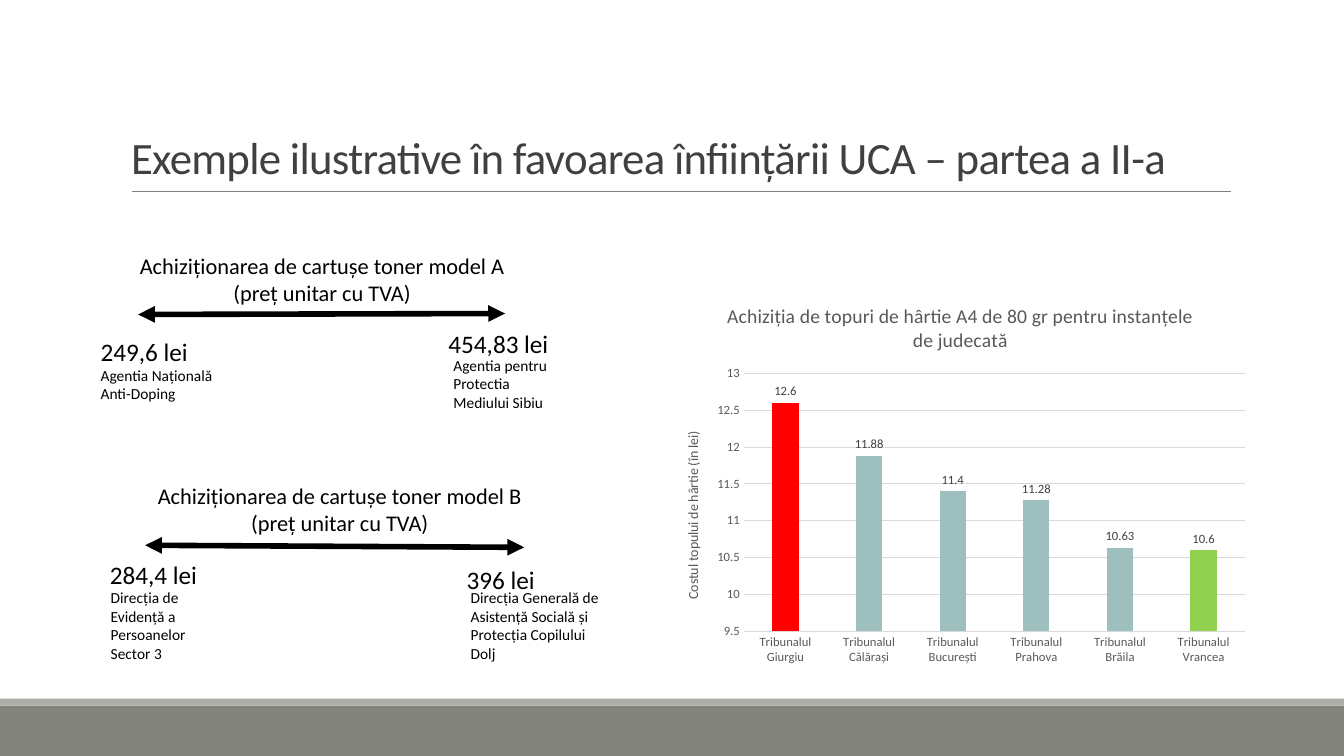
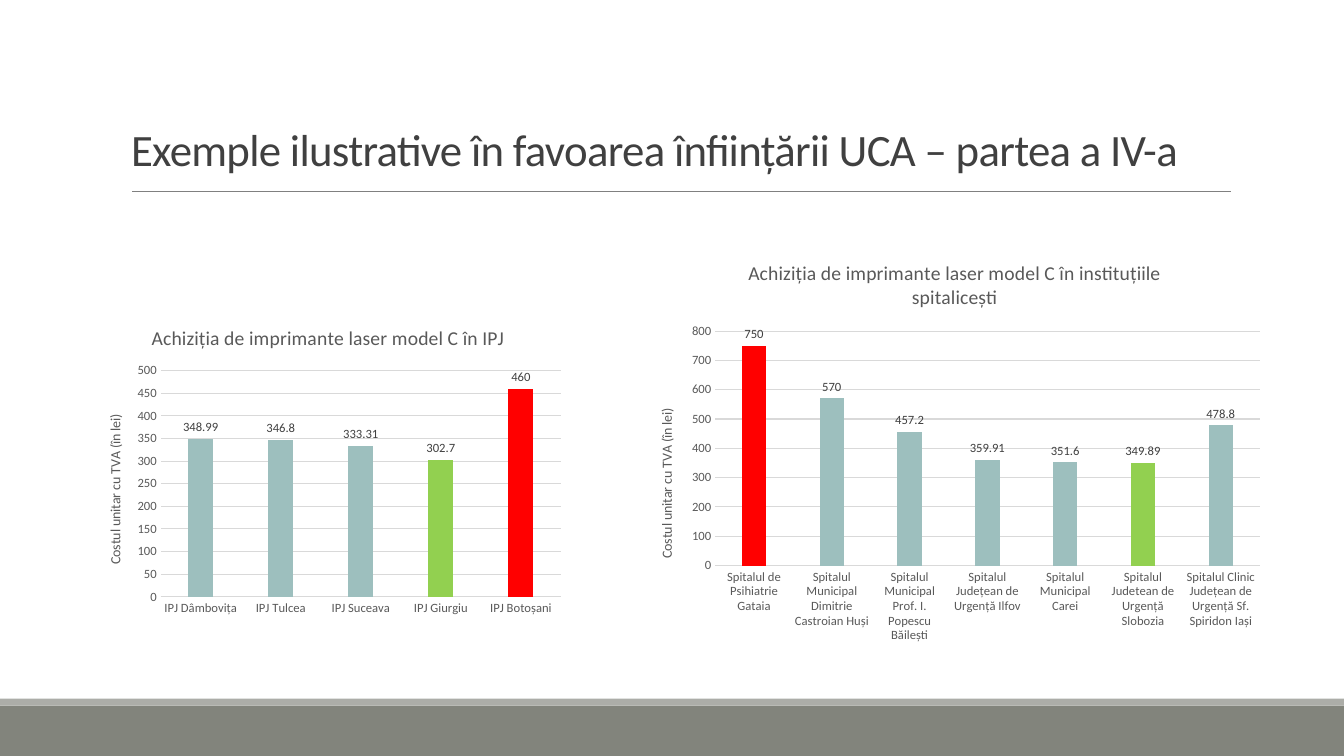
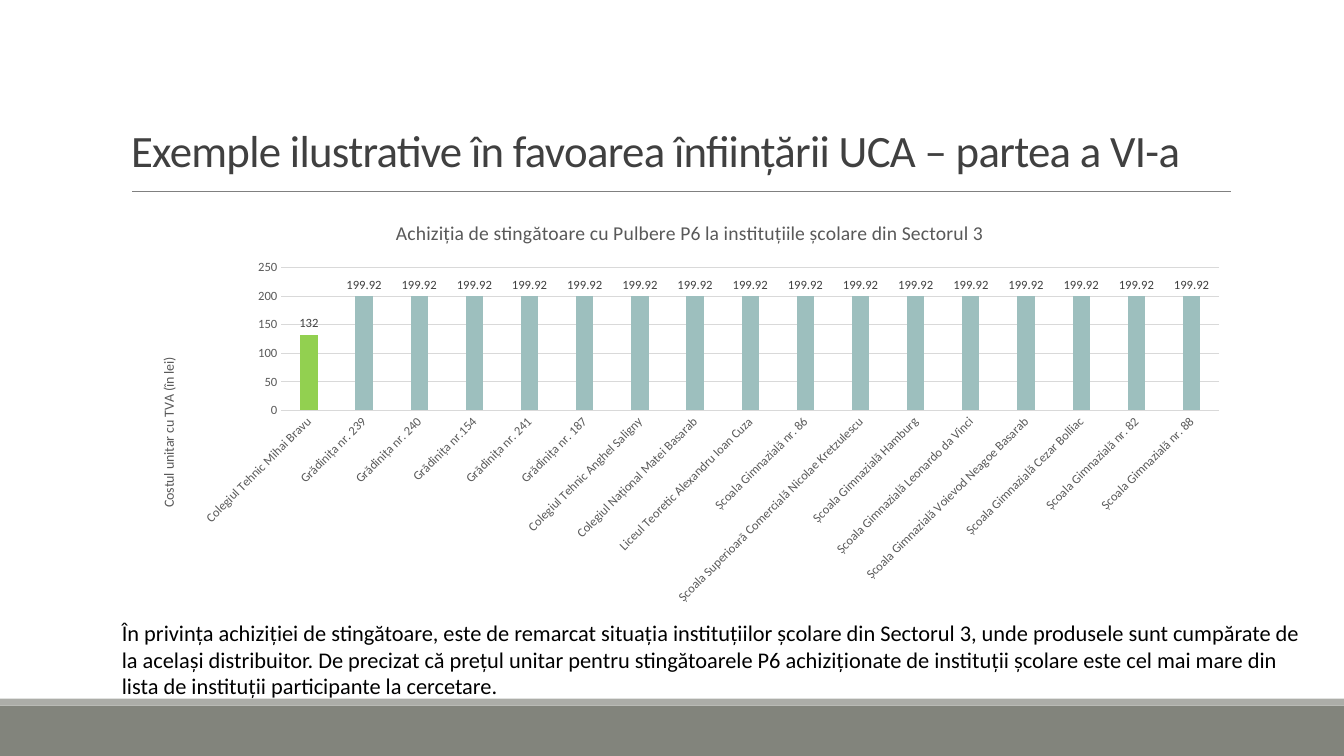
from lxml import etree
from pptx import Presentation
from pptx import util as u
from pptx.chart.data import CategoryChartData
from pptx.dml.color import RGBColor
from pptx.enum import chart as ch, shapes, text
from pptx.oxml.ns import qn

FONT = "Calibri"
BLACK = RGBColor(0x00, 0x00, 0x00)
TITLE_GREY = RGBColor(0x40, 0x40, 0x40)
CHART_GREY = RGBColor(0x59, 0x59, 0x59)
GRID_GREY = RGBColor(0xD9, 0xD9, 0xD9)
RULE_GREY = RGBColor(0x80, 0x80, 0x80)
BAND_DARK = RGBColor(0x82, 0x84, 0x7C)
BAND_LIGHT = RGBColor(0xAC, 0xAD, 0xA8)
TEAL = RGBColor(0x9D, 0xBF, 0xBE)
RED = RGBColor(0xFF, 0x00, 0x00)
GREEN = RGBColor(0x92, 0xD0, 0x50)

TITLE = "Exemple ilustrative în favoarea înființării UCA – partea "
UNIT_COST = "Costul unitar cu TVA (în lei)"
AUTO_ROTATION = -60000000
SLANTED = -45 * 60000


class Deck:
    """Shared style and current slide; lengths are percent of the slide's size."""

    def __init__(self):
        self.prs = Presentation()
        self.prs.slide_width = u.Inches(13.33)
        self.prs.slide_height = u.Inches(7.5)
        self.s = None

    def x(self, share):
        return round(self.prs.slide_width * share / 100)

    def y(self, share):
        return round(self.prs.slide_height * share / 100)

    def box(self, left, top, width, height):
        return self.x(left), self.y(top), self.x(width), self.y(height)

    @staticmethod
    def font(font, size, color):
        font.name = FONT
        font.size = u.Pt(size)
        font.bold = False
        font.color.rgb = color

    def run(self, p, words, size, color):
        r = p.add_run()
        r.text = words
        self.font(r.font, size, color)

    def slide(self, part, title_height):
        self.s = self.prs.slides.add_slide(self.prs.slide_layouts[5])
        self.band(93.33, 6.67, BAND_DARK)
        self.band(92.4, 0.93, BAND_LIGHT)
        self.line(9.83, 25.33, 91.6, 25.33, RULE_GREY, 0.5)
        sp = self.s.shapes.title
        sp.left, sp.top, sp.width, sp.height = self.box(9, 4.13, 82.5, title_height)
        tf = sp.text_frame
        tf.word_wrap = True
        tf.auto_size = text.MSO_AUTO_SIZE.NONE
        tf.vertical_anchor = text.MSO_ANCHOR.BOTTOM
        p = tf.paragraphs[0]
        p.alignment = text.PP_ALIGN.LEFT
        p.line_spacing = 0.85
        self.run(p, TITLE + part, 32, TITLE_GREY)
        for props in sp.element.iter(qn("a:rPr")):
            props.set("spc", "-50")

    def band(self, top, height, color):
        sp = self.s.shapes.add_shape(shapes.MSO_SHAPE.RECTANGLE, *self.box(0, top, 100, height))
        sp.shadow.inherit = False
        sp.fill.solid()
        sp.fill.fore_color.rgb = color
        sp.line.fill.background()

    def line(self, x1, y1, x2, y2, color, width, arrows=False):
        c = self.s.shapes.add_connector(
            shapes.MSO_CONNECTOR.STRAIGHT, self.x(x1), self.y(y1), self.x(x2), self.y(y2))
        c.line.color.rgb = color
        c.line.width = u.Pt(width)
        ln = c.element.find(".//" + qn("a:ln"))
        if arrows:
            for end in ("a:headEnd", "a:tailEnd"):
                etree.SubElement(ln, qn(end)).set("type", "triangle")
        etree.SubElement(ln.getparent(), qn("a:effectLst"))

    def text(self, at, size, *lines, align=text.PP_ALIGN.LEFT):
        tf = self.s.shapes.add_textbox(*self.box(*at)).text_frame
        tf.word_wrap = True
        tf.auto_size = text.MSO_AUTO_SIZE.SHAPE_TO_FIT_TEXT
        for i, words in enumerate(lines):
            p = tf.add_paragraph() if i else tf.paragraphs[0]
            p.alignment = align
            self.run(p, words, size, BLACK)

    def heading(self, at, product):
        self.text(at, 16, "Achiziționarea de cartușe toner " + product,
                  "(preț unitar cu TVA)", align=text.PP_ALIGN.CENTER)

    def price(self, left, top, amount):
        self.text((left, top, 12.98, 5.33), 18, amount)

    def chart(self, at, title, axis_title, bars, scale, marked, rotation=AUTO_ROTATION):
        """Column chart; bars are (category, value), scale is (min, max, step)."""
        data = CategoryChartData()
        data.categories = [name for name, _ in bars]
        data.add_series("Series 1", [value for _, value in bars])
        chart = self.s.shapes.add_chart(
            ch.XL_CHART_TYPE.COLUMN_CLUSTERED, *self.box(*at), data).chart
        self.font(chart.font, 10, BLACK)
        chart.has_legend = False
        chart.has_title = True
        self.run(chart.chart_title.text_frame.paragraphs[0], title, 14, CHART_GREY)

        cat, val = chart.category_axis, chart.value_axis
        for axis in (cat, val):
            axis.major_tick_mark = axis.minor_tick_mark = ch.XL_TICK_MARK.NONE
            self.font(axis.tick_labels.font, 9, CHART_GREY)
        cat.format.line.color.rgb = GRID_GREY
        cat.format.line.width = u.Pt(0.75)
        body = cat.tick_labels.font and chart.element.find(
            ".//" + qn("c:catAx") + "/" + qn("c:txPr") + "/" + qn("a:bodyPr"))
        body.set("rot", str(rotation))
        body.set("vert", "horz")
        val.minimum_scale, val.maximum_scale, val.major_unit = scale
        val.format.line.fill.background()
        val.has_major_gridlines = True
        val.major_gridlines.format.line.color.rgb = GRID_GREY
        val.major_gridlines.format.line.width = u.Pt(0.75)
        val.has_title = True
        self.run(val.axis_title.text_frame.paragraphs[0], axis_title, 10, CHART_GREY)

        plot = chart.plots[0]
        plot.vary_by_categories = False
        plot.gap_width = 219
        plot.overlap = -27
        series = plot.series[0]
        series.format.fill.solid()
        series.format.fill.fore_color.rgb = TEAL
        for index, color in marked.items():
            fill = series.points[index].format.fill
            fill.solid()
            fill.fore_color.rgb = color
        labels = series.data_labels
        labels.show_value = True
        labels.position = ch.XL_LABEL_POSITION.OUTSIDE_END
        self.font(labels.font, 9, TITLE_GREY)


def toner_and_paper(deck):
    deck.slide("a II-a", 20.8)
    deck.heading((8.33, 32.67, 31.28, 8.53), "model A")
    deck.line(10.28, 41.6, 37.58, 41.47, BLACK, 4, arrows=True)
    deck.price(6.75, 43.87, "249,6 lei")
    deck.text((6.75, 47.73, 11.33, 6.27), 11, "Agentia Națională", "Anti-Doping")
    deck.price(32.63, 42.8, "454,83 lei")
    deck.text((33, 46.4, 11.33, 8.8), 11, "Agentia pentru Protectia", "Mediului Sibiu")

    deck.heading((8.93, 63.07, 32.7, 12.13), "model B")
    deck.line(10.8, 72.13, 39, 72.4, BLACK, 4, arrows=True)
    deck.price(7.43, 73.33, "284,4 lei")
    deck.text((7.5, 77.2, 9, 11.2), 11, "Direcția de Evidență a Persoanelor Sector 3")
    deck.price(33.98, 74, "396 lei")
    deck.text((34.28, 77.2, 11.33, 11.2), 11,
              "Direcția Generală de Asistență Socială și Protecția Copilului Dolj")

    courts = [("Giurgiu", 12.6), ("Călărași", 11.88), ("București", 11.4),
              ("Prahova", 11.28), ("Brăila", 10.63), ("Vrancea", 10.6)]
    deck.chart((49.36, 37.73, 44.19, 51.2),
               "Achiziția de topuri de hârtie A4 de 80 gr pentru instanțele de judecată",
               "Costul topului de hârtie (în lei)",
               [("Tribunalul " + town, cost) for town, cost in courts],
               (9.5, 13, 0.5), {0: RED, 5: GREEN})


def printers(deck):
    deck.slide("a IV-a", 19.73)
    purchase = "Achiziția de imprimante laser model C în "
    police = [("Dâmbovița", 348.99), ("Tulcea", 346.8), ("Suceava", 333.31),
              ("Giurgiu", 302.7), ("Botoșani", 460)]
    deck.chart((6.38, 40.93, 36.08, 41.33), purchase + "IPJ", UNIT_COST,
               [("IPJ " + county, cost) for county, cost in police],
               (0, 500, 50), {3: GREEN, 4: RED})
    hospitals = [("de Psihiatrie Gataia", 750),
                 ("Municipal Dimitrie Castroian Huși", 570),
                 ("Municipal Prof. I. Popescu Băilești", 457.2),
                 ("Județean de Urgență Ilfov", 359.91),
                 ("Municipal Carei", 351.6),
                 ("Judetean de Urgență Slobozia", 349.89),
                 ("Clinic Județean de Urgență Sf. Spiridon Iași", 478.8)]
    deck.chart((47.41, 32, 47.26, 54.13), purchase + "instituțiile spitalicești", UNIT_COST,
               [("Spitalul " + name, cost) for name, cost in hospitals],
               (0, 800, 100), {0: RED, 5: GREEN})


def extinguishers(deck):
    deck.slide("a VI-a", 19.87)
    deck.text((8.33, 81.2, 89.27, 16.13), 16,
              "În privința achiziției de stingătoare, este de remarcat situația instituțiilor "
              "școlare din Sectorul 3, unde produsele sunt cumpărate de la același distribuitor. "
              "De precizat că prețul unitar pentru stingătoarele P6 achiziționate de instituții "
              "școlare este cel mai mare din lista de instituții participante la cercetare.")
    same_price = [
        "Grădinița nr. 239", "Grădinița nr. 240", "Grădinița nr.154", "Grădinița nr. 241",
        "Grădinița nr. 187", "Colegiul Tehnic Anghel Saligny",
        "Colegiul Național Matei Basarab", "Liceul Teoretic Alexandru Ioan Cuza",
        "Școala Gimnazială nr. 86", "Școala Superioară Comercială Nicolae Kretzulescu",
        "Școala Gimnazială Hamburg", "Școala Gimnazială Leonardo da Vinci",
        "Școala Gimnazială Voievod Neagoe Basarab", "Școala Gimnazială Cezar Bolliac",
        "Școala Gimnazială nr. 82", "Școala Gimnazială nr. 88"]
    deck.chart((10.35, 26.8, 82, 54.27),
               "Achiziția de stingătoare cu Pulbere P6 la instituțiile școlare din Sectorul 3",
               UNIT_COST,
               [("Colegiul Tehnic Mihai Bravu", 132)] + [(name, 199.92) for name in same_price],
               (0, 250, 50), {0: GREEN}, SLANTED)


def main():
    deck = Deck()
    for build in (toner_and_paper, printers, extinguishers):
        build(deck)
    deck.prs.save("out.pptx")


if __name__ == "__main__":
    main()
